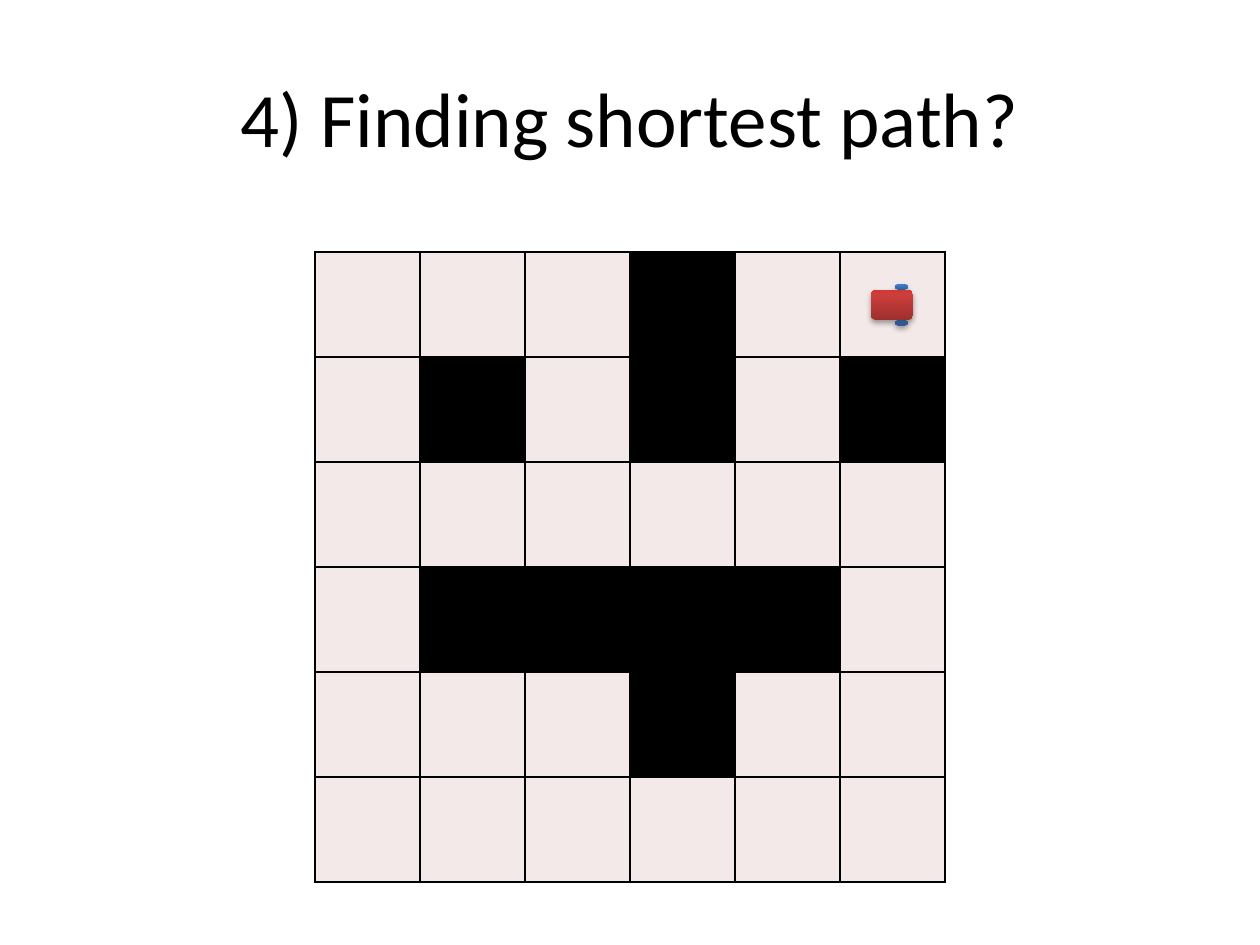
"""Build a slide with a maze grid and a small robot for a shortest path question."""
from lxml import etree
from pptx import Presentation
from pptx.dml.color import RGBColor
from pptx.enum.shapes import MSO_SHAPE
from pptx.enum.text import MSO_ANCHOR, PP_ALIGN
from pptx.oxml.ns import qn
from pptx.util import Emu, Pt

ELLIPSE, ROUNDED = MSO_SHAPE.OVAL, MSO_SHAPE.ROUNDED_RECTANGLE
MIDDLE, CENTER = MSO_ANCHOR.MIDDLE, PP_ALIGN.CENTER

BLACK = RGBColor(0x00, 0x00, 0x00)
FLOOR = RGBColor(0xF4, 0xE9, 0xE9)
BLUES = (RGBColor(0x2F, 0x5F, 0x99), RGBColor(0x3D, 0x7C, 0xC7), RGBColor(0x3A, 0x7C, 0xCB))
REDS = (RGBColor(0x9C, 0x2F, 0x2D), RGBColor(0xCB, 0x3E, 0x3A), RGBColor(0xCE, 0x3B, 0x37))
GRADIENT_STOPS = (0, 80, 100)

PX_PER_INCH = 126
CELL = 105
MAZE = (
    "...#..",
    ".#.#.#",
    "......",
    ".####.",
    "...#..",
    "......",
)


def px(length):
    return Emu(round(length * 914400 / PX_PER_INCH))


def add_element(parent, tag, **attributes):
    values = {name: str(value) for name, value in attributes.items()}
    return etree.SubElement(parent, qn(tag), values)


def add_color(parent, color):
    return add_element(parent, "a:srgbClr", val=color)


class SlideBuilder:
    def __init__(self, slide, font="Calibri"):
        self.slide = slide
        self.font = font

    def title(self, text, left, top, width, height):
        shape = self.slide.shapes.title
        shape.left, shape.top, shape.width, shape.height = map(px, (left, top, width, height))
        frame = shape.text_frame
        frame.text = text
        frame.vertical_anchor = MIDDLE
        paragraph = frame.paragraphs[0]
        paragraph.alignment = CENTER
        paragraph.font.name = self.font
        paragraph.font.size = Pt(44)
        paragraph.font.color.rgb = BLACK

    def maze(self, rows, left, top):
        columns = len(rows[0])
        table = self.slide.shapes.add_table(
            len(rows), columns, px(left), px(top), px(columns * CELL), px(len(rows) * CELL)
        ).table
        table.first_row = table.horz_banding = False
        for row_index, row in enumerate(rows):
            for column_index, mark in enumerate(row):
                cell = table.cell(row_index, column_index)
                self.borders(cell)
                cell.fill.solid()
                cell.fill.fore_color.rgb = BLACK if mark == "#" else FLOOR

    def borders(self, cell):
        properties = cell._tc.get_or_add_tcPr()
        for side in ("a:lnL", "a:lnR", "a:lnT", "a:lnB"):
            line = add_element(properties, side, w=Pt(1))
            add_color(add_element(line, "a:solidFill"), BLACK)

    def group(self):
        return self.slide.shapes.add_group_shape()

    def glossy_shape(self, group, kind, colors, left, top, width, height):
        shape = group.shapes.add_shape(kind, px(left), px(top), px(width), px(height))
        properties = shape.element.spPr
        gradient = add_element(properties, "a:gradFill", rotWithShape=1)
        stops = add_element(gradient, "a:gsLst")
        for position, color in zip(GRADIENT_STOPS, colors):
            add_color(add_element(stops, "a:gs", pos=position * 1000), color)
        add_element(gradient, "a:lin", ang=270 * 60000, scaled=0)
        shape.line.fill.background()
        shape.shadow.inherit = False
        shadow = add_element(
            properties.find(qn("a:effectLst")), "a:outerShdw",
            blurRad=Pt(3.1), dist=Pt(1.8), dir=90 * 60000, rotWithShape=0,
        )
        add_element(add_color(shadow, BLACK), "a:alpha", val=35000)


def main():
    presentation = Presentation()
    presentation.slide_width, presentation.slide_height = px(1260), px(945)
    builder = SlideBuilder(presentation.slides.add_slide(presentation.slide_layouts[5]))
    builder.maze(MAZE, 315, 252)
    builder.title("4) Finding shortest path?", 63, 38, 1134, 158)
    robot = builder.group()
    for wheel_top in (284, 320):
        builder.glossy_shape(robot, ELLIPSE, BLUES, 895, wheel_top, 13, 6)
    builder.glossy_shape(robot, ROUNDED, REDS, 871, 290, 42, 30)
    presentation.save("out.pptx")


if __name__ == "__main__":
    main()
